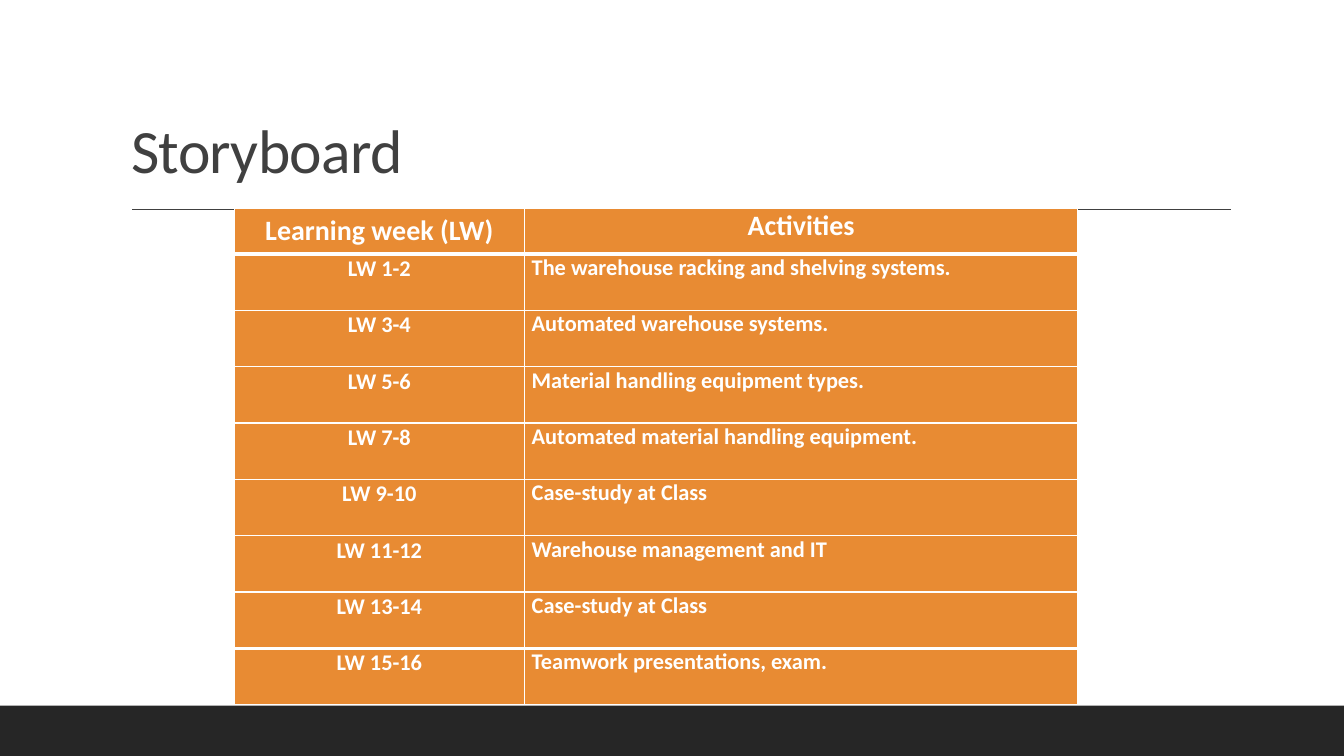
"""Build the Storyboard slide: a course schedule by learning week."""
from dataclasses import dataclass

from lxml.etree import SubElement
from pptx import Presentation
from pptx.dml.color import RGBColor as RGB
from pptx.enum.shapes import MSO_CONNECTOR as Connector, MSO_SHAPE as Shape
from pptx.enum.text import MSO_ANCHOR as Anchor, MSO_AUTO_SIZE as AutoSize, PP_ALIGN as Align
from pptx.oxml.ns import qn
from pptx.util import Cm, Pt


@dataclass(frozen=True)
class Theme:
    font: str = "Calibri"
    ink: str = "404040"
    footer: str = "262626"
    cell: str = "E88B33"
    white: str = "FFFFFF"
    title_size: int = 44
    header_size: int = 20
    body_size: int = 16
    thin: int = 1
    thick: int = 3


theme = Theme()


def add_text(paragraph, text, size, color, bold=False):
    run = paragraph.add_run()
    run.text = text
    run.font.name = theme.font
    run.font.size = Pt(size)
    run.font.bold = bold
    run.font.color.rgb = RGB.from_string(color)
    return run


def add_border(cell, side, width):
    line = SubElement(cell._tc.get_or_add_tcPr(), qn(f"a:ln{side}"), w=str(Pt(width)))
    SubElement(SubElement(line, qn("a:solidFill")), qn("a:srgbClr"), val=theme.white)


deck = Presentation()
deck.slide_width, deck.slide_height = Cm(33.87), Cm(19.05)
slide = deck.slides.add_slide(deck.slide_layouts[5])

footer_bar = slide.shapes.add_shape(Shape.RECTANGLE, 0, Cm(17.78), deck.slide_width, Cm(1.27))
footer_bar.shadow.inherit = False
footer_bar.fill.solid()
footer_bar.fill.fore_color.rgb = RGB.from_string(theme.footer)
footer_bar.line.fill.background()

title_rule = slide.shapes.add_connector(Connector.STRAIGHT, Cm(3.33), Cm(5.28), Cm(31.01), Cm(5.28))
title_rule.line.color.rgb = RGB.from_string(theme.ink)
title_rule.line.width = Pt(theme.thin)
SubElement(title_rule._element.spPr, qn("a:effectLst"))

title = slide.shapes.title
title.left, title.top, title.width, title.height = Cm(3.05), Cm(0.79), Cm(27.94), Cm(4.04)
title.text_frame.auto_size = AutoSize.NONE
title.text_frame.vertical_anchor = Anchor.BOTTOM
heading = title.text_frame.paragraphs[0]
heading.alignment = Align.LEFT
heading.line_spacing = 0.9
heading_run = add_text(heading, "Storyboard", theme.title_size, theme.ink)
heading_run._r.get_or_add_rPr().set("spc", "-50")

schedule_rows = [
    ("Learning week (LW)", "Activities"),
    ("LW 1-2", "The warehouse racking and shelving systems."),
    ("LW 3-4", "Automated warehouse systems."),
    ("LW 5-6", "Material handling equipment types."),
    ("LW 7-8", "Automated material handling equipment."),
    ("LW 9-10", "Case-study at Class"),
    ("LW 11-12", "Warehouse management and IT"),
    ("LW 13-14", "Case-study at Class"),
    ("LW 15-16", "Teamwork presentations, exam."),
]
last = len(schedule_rows) - 1
schedule = slide.shapes.add_table(
    len(schedule_rows), 2, Cm(5.9), Cm(5.26), Cm(21.26), Cm(12.5)).table
schedule.horz_banding = False
schedule.columns[0].width, schedule.columns[1].width = Cm(7.32), Cm(13.94)

for row, entries in enumerate(schedule_rows):
    is_header = row == 0
    schedule.rows[row].height = Cm(1.14 if is_header else 1.42)
    for column, entry in enumerate(entries):
        cell = schedule.cell(row, column)
        cell.margin_left = cell.margin_right = Cm(0.18)
        cell.margin_top = Cm(0 if is_header or column else 0.03)
        cell.margin_bottom = 0
        cell.vertical_anchor = Anchor.MIDDLE if is_header and column == 0 else Anchor.TOP
        borders = {
            "L": theme.thin,
            "R": theme.thin,
            "T": theme.thick if row in (1, last) else theme.thin,
            "B": theme.thick if row in (0, last - 1) else theme.thin,
        }
        for side, width in borders.items():
            add_border(cell, side, width)
        cell.fill.solid()
        cell.fill.fore_color.rgb = RGB.from_string(theme.cell)
        paragraph = cell.text_frame.paragraphs[0]
        paragraph.alignment = Align.CENTER if is_header or column == 0 else Align.JUSTIFY
        add_text(paragraph, entry, theme.header_size if is_header else theme.body_size,
                 theme.white, bold=True)

deck.save("out.pptx")
